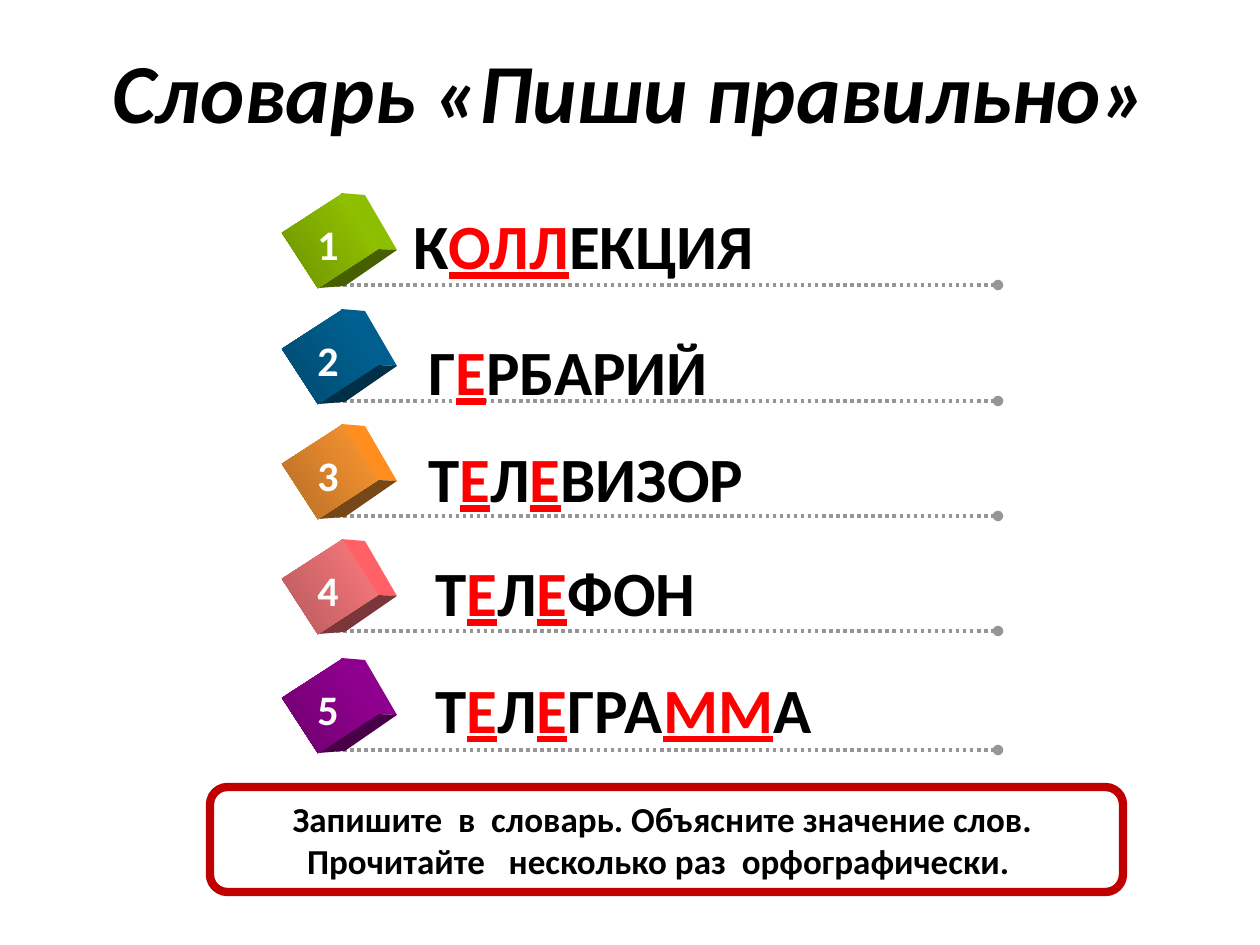
from lxml.etree import SubElement
from pptx import Presentation
from pptx.dml.color import RGBColor
from pptx.enum.dml import MSO_LINE
from pptx.enum.shapes import MSO_CONNECTOR, MSO_SHAPE
from pptx.enum.text import MSO_ANCHOR, MSO_AUTO_SIZE, PP_ALIGN
from pptx.oxml.ns import qn
from pptx.util import Pt

EMU_PER_PIXEL = 914400 / 126
FONT = "Calibri"
BLACK, WHITE, RED = "000000", "FFFFFF", "FF0000"
TITLE = "Словарь «Пиши правильно»"
TASK = ("Запишите  в  словарь. Объясните значение слов. \n"
        "Прочитайте   несколько раз  орфографически.  ")
ROWS = [
    ("К_ОЛЛ_ЕКЦИЯ", (401, 200, 596, 89), True, 285, "99CC00", "6D9200"),
    ("Г_Е_РБАРИЙ", (416, 326, 307, 89), False, 401, "006699", "00496D"),
    ("Т_Е_Л_Е_ВИЗОР", (416, 433, 499, 89), True, 516, "FF9933", "B66D24"),
    ("Т_Е_Л_Е_ФОН", (423, 547, 328, 89), True, 631, "FF7C80", "B6595C"),
    ("Т_Е_Л_Е_ГРА_ММ_А", (423, 664, 404, 89), False, 750, "990099", "6D006D"),
]
SIDE_FACE = [(341, -92), (365, -90), (397, -35), (376, -36)]
BOTTOM_FACE = [(319, 3), (376, -36), (397, -35), (345, 1)]


def px(value):
    return round(value * EMU_PER_PIXEL)


def box(*values):
    return [px(value) for value in values]


def color(hex_value):
    return RGBColor.from_string(hex_value)


def style_font(font, size, hex_value, italic=None):
    font.name = FONT
    font.size = Pt(size)
    font.bold = True
    font.italic = italic
    font.color.rgb = color(hex_value)


def add_title(slide):
    title = slide.shapes.title
    title.left, title.top, title.width, title.height = box(87, 35, 1086, 123)
    title.text_frame.text = TITLE
    title.text_frame.vertical_anchor = MSO_ANCHOR.MIDDLE
    paragraph = title.text_frame.paragraphs[0]
    paragraph.alignment = PP_ALIGN.CENTER
    paragraph.line_spacing = 0.9
    style_font(paragraph.runs[0].font, 48, BLACK, italic=True)


def add_dotted_line(slide, y):
    line = slide.shapes.add_connector(
        MSO_CONNECTOR.STRAIGHT, *box(336, y, 998, y))
    line.line.color.rgb = color("969696")
    line.line.width = Pt(2)
    line.line.dash_style = MSO_LINE.ROUND_DOT
    properties = line.line._get_or_add_ln()
    SubElement(properties, qn("a:tailEnd"), type="oval")
    SubElement(line._element.spPr, qn("a:effectLst"))


def add_face(slide, points, y, hex_value, brightness=0):
    corners = [(px(x), px(y + offset)) for x, offset in points]
    builder = slide.shapes.build_freeform(*corners[0])
    builder.add_line_segments(corners[1:], close=True)
    face = builder.convert_to_shape()
    face.shadow.inherit = False
    face.fill.solid()
    face.fill.fore_color.rgb = color(hex_value)
    face.fill.fore_color.brightness = brightness
    face.line.fill.background()


def add_cube(slide, y, light, dark):
    add_face(slide, SIDE_FACE, y, light, -0.07)
    add_face(slide, BOTTOM_FACE, y, dark, -0.35)
    front = slide.shapes.add_shape(
        MSO_SHAPE.RECTANGLE, *box(297, y - 80, 66, 72))
    front.rotation = 57
    front.shadow.inherit = False
    front.line.fill.background()
    front.fill.gradient()
    front.fill.gradient_angle = 270
    for stop, hex_value in zip(front.fill.gradient_stops, (light, dark)):
        stop.color.rgb = color(hex_value)


def add_text_box(slide, bounds, wrap):
    text_box = slide.shapes.add_textbox(*box(*bounds))
    text_frame = text_box.text_frame
    text_frame.word_wrap = wrap
    text_frame.auto_size = MSO_AUTO_SIZE.SHAPE_TO_FIT_TEXT
    return text_frame


def add_number(slide, number, y):
    text_frame = add_text_box(slide, (305, y - 73, 49, 63), False)
    text_frame.text = str(number)
    style_font(text_frame.paragraphs[0].runs[0].font, 24, WHITE)


def add_word(slide, word, bounds, wrap):
    paragraph = add_text_box(slide, bounds, wrap).paragraphs[0]
    for index, letters in enumerate(word.split("_")):
        highlighted = index % 2 == 1
        run = paragraph.add_run()
        run.text = letters
        style_font(run.font, 36, RED if highlighted else BLACK)
        run.font.underline = highlighted


def add_task(slide):
    task = slide.shapes.add_shape(
        MSO_SHAPE.ROUNDED_RECTANGLE, *box(210, 787, 913, 105))
    task.shadow.inherit = False
    task.fill.solid()
    task.fill.fore_color.rgb = color(WHITE)
    task.line.color.rgb = color("C00000")
    task.line.width = Pt(4.75)
    task.text_frame.text = TASK
    task.text_frame.vertical_anchor = MSO_ANCHOR.MIDDLE
    for paragraph in task.text_frame.paragraphs:
        paragraph.alignment = PP_ALIGN.CENTER
        style_font(paragraph.runs[0].font, 20, BLACK)


def main():
    presentation = Presentation()
    presentation.slide_width, presentation.slide_height = box(1260, 945)
    slide = presentation.slides.add_slide(presentation.slide_layouts[5])
    add_title(slide)
    for number, (word, bounds, wrap, y, light, dark) in enumerate(ROWS, 1):
        add_dotted_line(slide, y)
        add_cube(slide, y, light, dark)
        add_word(slide, word, bounds, wrap)
        add_number(slide, number, y)
    add_task(slide)
    presentation.save("out.pptx")


if __name__ == "__main__":
    main()
